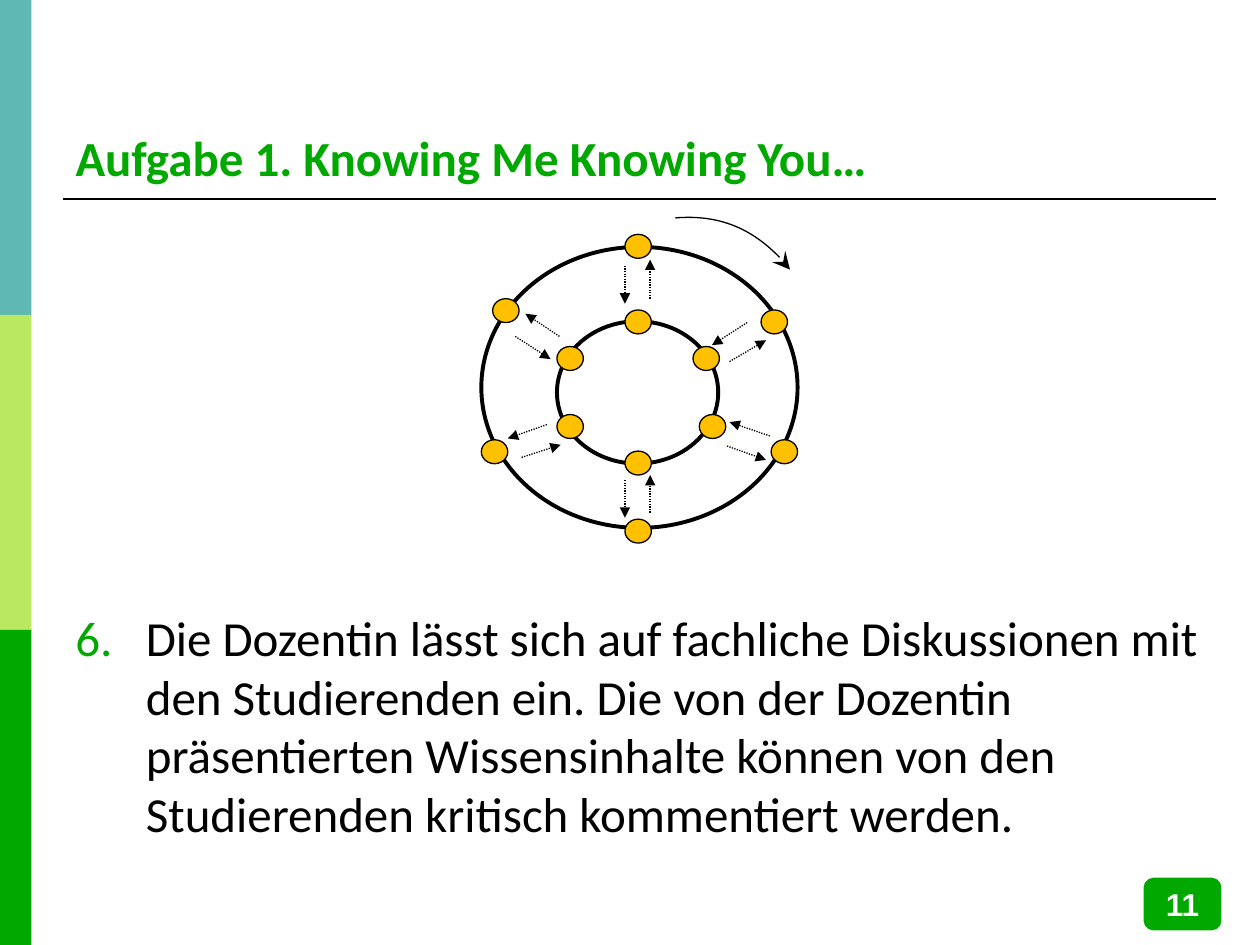
from dataclasses import dataclass
from typing import NamedTuple

from lxml import etree
from pptx import Presentation
from pptx import util as u
from pptx.dml.color import RGBColor
from pptx.enum import dml, shapes, text
from pptx.oxml import ns


@dataclass(frozen=True)
class Theme:
    teal: str = "5FB8B2"
    lime: str = "BAE860"
    green: str = "00A800"
    amber: str = "FFC000"
    black: str = "000000"
    white: str = "FFFFFF"
    font: str = "Calibri"
    number_font: str = "Arial"
    text_size: float = 28
    number_size: float = 18


class Box(NamedTuple):
    left: float
    top: float
    width: float
    height: float

    def lengths(self) -> list:
        return [u.Inches(value) for value in self]


class Segment(NamedTuple):
    x1: float
    y1: float
    x2: float
    y2: float


THEME = Theme()
PRESET = shapes.MSO_SHAPE

RINGS = [Box(3.82, 1.96, 2.51, 2.23), Box(4.42, 2.55, 1.28, 1.13)]

# Left and top of each person, clockwise from the top
DOT_WIDTH, DOT_HEIGHT = 0.21, 0.19
OUTER_DOTS = [(4.96, 1.86), (6.04, 2.46), (6.12, 3.49),
              (4.96, 4.12), (3.82, 3.49), (3.91, 2.37)]
INNER_DOTS = [(4.96, 2.46), (5.5, 2.75), (5.55, 3.29),
              (4.96, 3.58), (4.42, 3.29), (4.42, 2.75)]

# A pair of opposite arrows between each two partners, clockwise from the top
TALKS = [
    (Segment(4.96, 2.11, 4.96, 2.41), Segment(5.16, 2.37, 5.16, 2.06)),
    (Segment(5.93, 2.56, 5.65, 2.74), Segment(5.79, 2.87, 6.08, 2.7)),
    (Segment(6.11, 3.46, 5.79, 3.35), Segment(5.77, 3.54, 6.08, 3.65)),
    (Segment(4.96, 3.81, 4.96, 4.11), Segment(5.16, 4.07, 5.16, 3.77)),
    (Segment(4.34, 3.37, 4.03, 3.48), Segment(4.14, 3.63, 4.45, 3.53)),
    (Segment(4.44, 2.67, 4.17, 2.49), Segment(4.09, 2.67, 4.37, 2.85)),
]

# Start, two control points and end of the rotation arrow
ROTATION = [(5.36, 1.73), (5.71, 1.7), (6.05, 1.85), (6.27, 2.14)]


def add_child(parent, tag: str, **attributes: str):
    return etree.SubElement(parent, ns.qn(tag), attributes)


def set_line(line, color: str, width: float) -> None:
    line.color.rgb = RGBColor.from_string(color)
    line.width = u.Pt(width)


def add_filled(parent, preset, box: Box, fill: str, line: str = "", width: float = 0):
    shape = parent.add_shape(preset, *box.lengths())
    shape.shadow.inherit = False
    shape.fill.solid()
    shape.fill.fore_color.rgb = RGBColor.from_string(fill)
    if line:
        set_line(shape.line, line, width)
    else:
        shape.line.fill.background()
    return shape


def add_line(parent, segment: Segment, width: float):
    line = parent.add_connector(shapes.MSO_CONNECTOR.STRAIGHT,
                                *[u.Inches(value) for value in segment])
    set_line(line.line, THEME.black, width)
    add_child(line._element.spPr, "a:effectLst")
    return line


def add_talk_arrow(parent, segment: Segment) -> None:
    arrow = add_line(parent, segment, 0.75)
    arrow.line.dash_style = dml.MSO_LINE.ROUND_DOT
    add_child(arrow.line._get_or_add_ln(), "a:tailEnd", type="triangle")


def add_curved_arrow(parent, points: list[tuple[float, float]]) -> None:
    start, *others = [(u.Inches(x), u.Inches(y)) for x, y in points]
    builder = parent.build_freeform(*start)
    builder.add_line_segments(others, close=False)
    arrow = builder.convert_to_shape()
    arrow.shadow.inherit = False
    arrow.fill.background()
    set_line(arrow.line, THEME.black, 0.75)
    add_child(arrow.line._get_or_add_ln(), "a:tailEnd",
              type="stealth", w="lg", len="lg")
    # Turn the three straight steps into one cubic curve
    steps = list(arrow._element.iter(ns.qn("a:lnTo")))
    curve = add_child(steps[0].getparent(), "a:cubicBezTo")
    for step in steps:
        curve.append(step[0])
        step.getparent().remove(step)


def add_run(para, words: str, font: str, size: float, color: str,
            bold: bool = False) -> None:
    span = para.add_run()
    span.text = words
    span.font.name = font
    span.font.size = u.Pt(size)
    span.font.bold = bold
    span.font.color.rgb = RGBColor.from_string(color)


def number_paragraph(para, start: int, indent: float) -> None:
    properties = para._p.get_or_add_pPr()
    properties.set("marL", str(u.Inches(indent)))
    properties.set("indent", str(-u.Inches(indent)))
    color = add_child(properties, "a:buClr")
    add_child(color, "a:srgbClr", val=THEME.green)
    add_child(properties, "a:buFont", typeface=THEME.font)
    add_child(properties, "a:buAutoNum", type="arabicPeriod", startAt=str(start))


def add_circles(page) -> None:
    group = page.shapes.add_group_shape().shapes
    for ring in RINGS:
        add_filled(group, PRESET.OVAL, ring, THEME.white, THEME.black, 2.25)
    for left, top in OUTER_DOTS + INNER_DOTS:
        add_filled(group, PRESET.FLOWCHART_CONNECTOR,
                   Box(left, top, DOT_WIDTH, DOT_HEIGHT),
                   THEME.amber, THEME.black, 0.75)
    for pair in TALKS:
        for segment in pair:
            add_talk_arrow(group, segment)
    add_curved_arrow(group, ROTATION)


def main() -> None:
    deck = Presentation()
    deck.slide_width, deck.slide_height = u.Inches(10), u.Inches(7.5)
    page = deck.slides.add_slide(deck.slide_layouts[5])

    # Side bands and title rule
    for index, color in enumerate((THEME.teal, THEME.lime, THEME.green)):
        add_filled(page.shapes, PRESET.RECTANGLE, Box(0, 2.5 * index, 0.25, 2.5), color)
    add_line(page.shapes, Segment(0.5, 1.58, 9.65, 1.58), 1.5)

    # Title
    title = page.shapes.title
    title.left, title.top, title.width, title.height = Box(0.5, 0.28, 9.15, 1.25).lengths()
    frame = title.text_frame
    frame.auto_size = text.MSO_AUTO_SIZE.NONE
    frame.vertical_anchor = text.MSO_ANCHOR.BOTTOM
    para = frame.paragraphs[0]
    para.alignment = text.PP_ALIGN.LEFT
    add_run(para, "Aufgabe 1. Knowing Me Knowing You…",
            THEME.font, THEME.text_size, THEME.green, bold=True)

    # Numbered task
    body = page.shapes.add_textbox(*Box(0.5, 4.77, 9.15, 2.44).lengths())
    body.text_frame.word_wrap = True
    para = body.text_frame.paragraphs[0]
    number_paragraph(para, start=6, indent=0.56)
    add_run(para, "Die Dozentin lässt sich auf fachliche Diskussionen mit den "
            "Studierenden ein. Die von der Dozentin präsentierten Wissensinhalte "
            "können von den Studierenden kritisch kommentiert werden.",
            THEME.font, THEME.text_size, THEME.black)

    # Two circles of people
    add_circles(page)

    # Page number
    badge = add_filled(page.shapes, PRESET.ROUNDED_RECTANGLE,
                       Box(9.09, 6.98, 0.59, 0.39), THEME.green, THEME.green, 2)
    badge.text_frame.vertical_anchor = text.MSO_ANCHOR.MIDDLE
    para = badge.text_frame.paragraphs[0]
    para.alignment = text.PP_ALIGN.CENTER
    add_run(para, "11", THEME.number_font, THEME.number_size, THEME.white, bold=True)

    deck.save("out.pptx")


if __name__ == "__main__":
    main()
